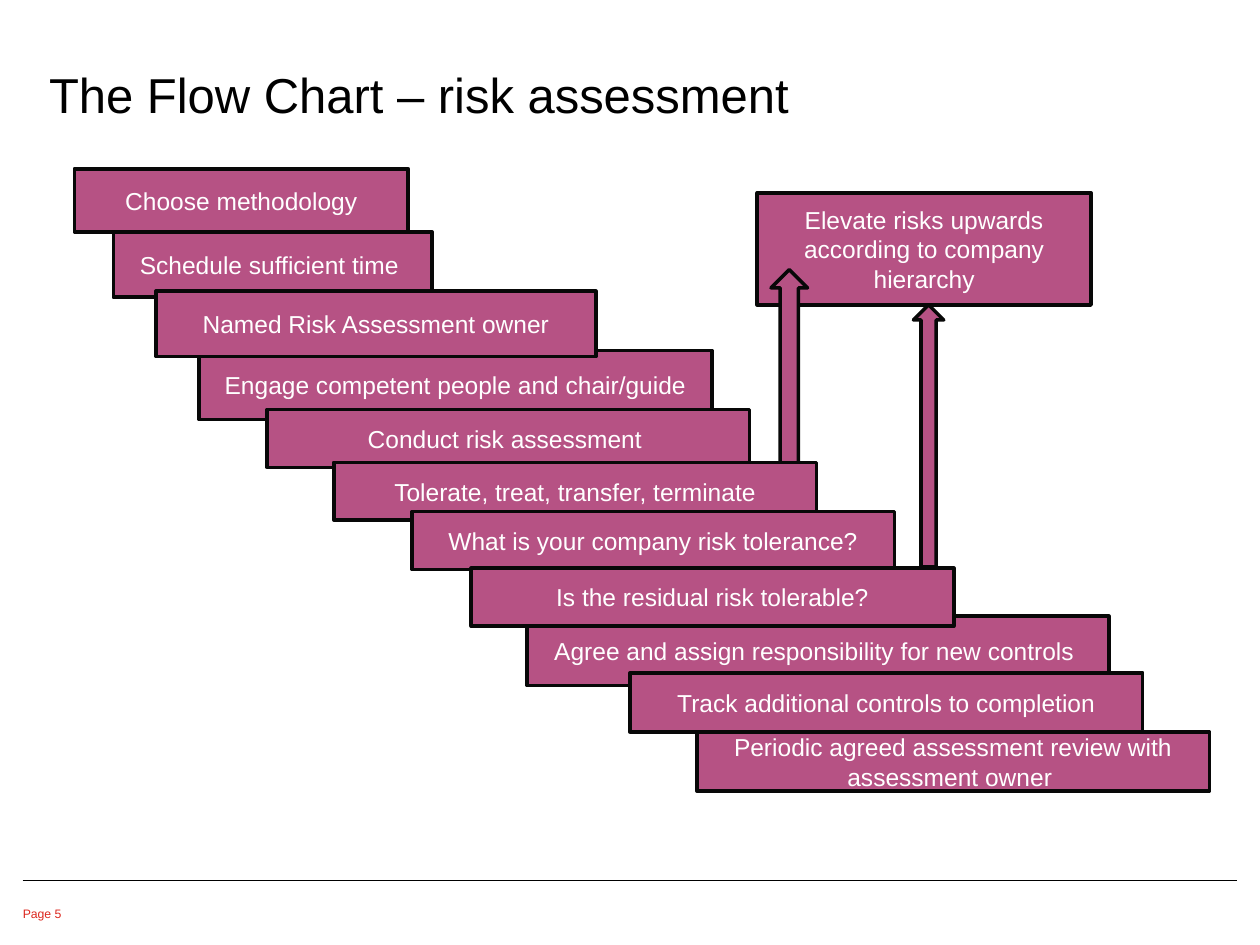
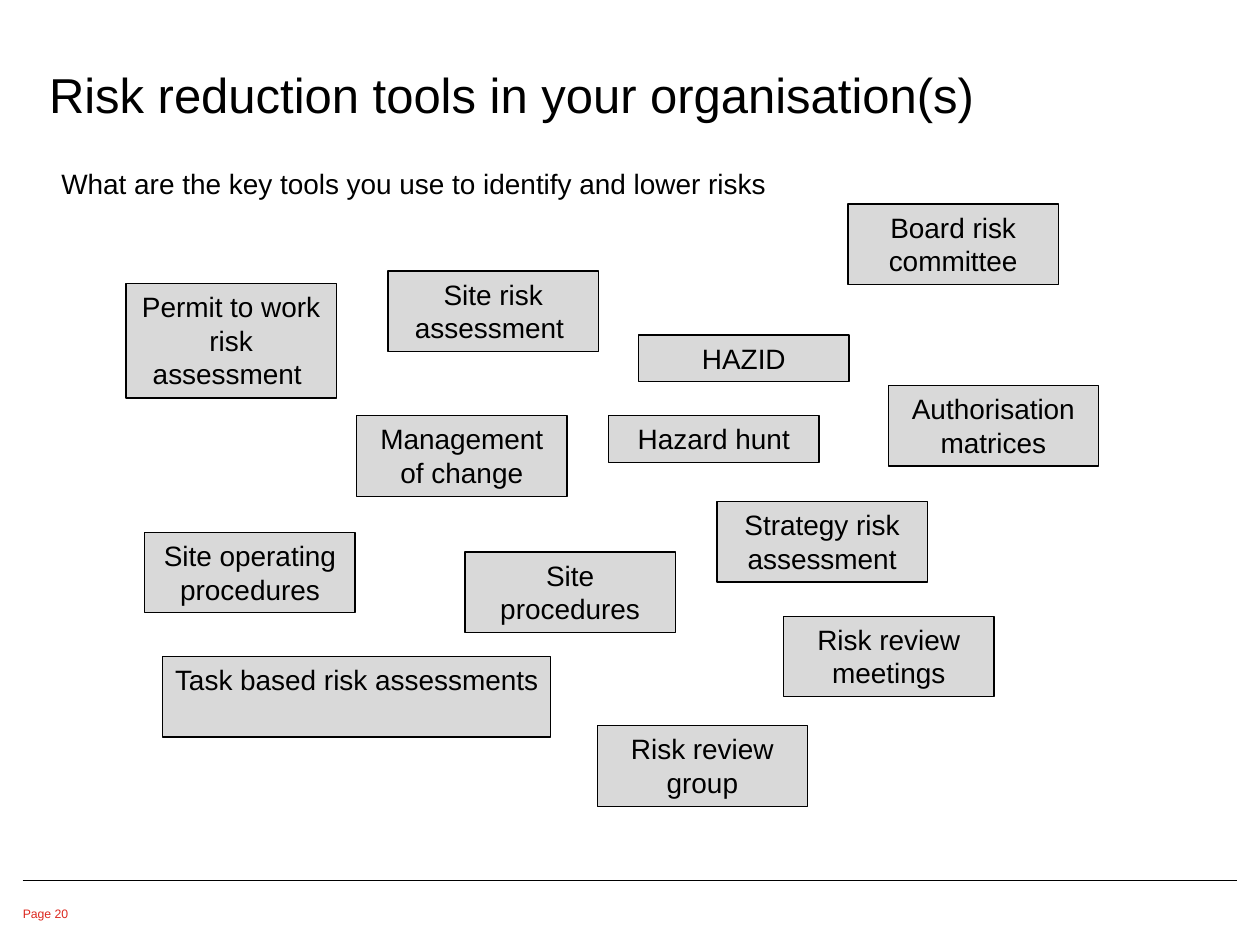
from dataclasses import dataclass
from typing import Any

from lxml import etree
from pptx import Presentation
from pptx import util as u
from pptx.dml.color import RGBColor
from pptx.enum import shapes, text
from pptx.oxml import ns

BLACK = RGBColor(0x00, 0x00, 0x00)
WHITE = RGBColor(0xFF, 0xFF, 0xFF)
OUTLINE = RGBColor(0x08, 0x08, 0x08)
MAGENTA = RGBColor(0xB6, 0x52, 0x84)
GREY = RGBColor(0xD9, 0xD9, 0xD9)
RED = RGBColor(0xDC, 0x27, 0x1E)

FONT = "Arial"
MARGIN = 13
RULE_TOP = 503.3
TOOL_WIDTH = 120.2
TOOL_LINE = 19.4
TOOL_PADDING = 7.2

NO_INSETS = {"margin_left": 0, "margin_top": 0, "margin_right": 0, "margin_bottom": 0}
FRAME = {"word_wrap": True, "auto_size": text.MSO_AUTO_SIZE.NONE}
TITLE_FRAME = {**FRAME, **NO_INSETS, "vertical_anchor": text.MSO_ANCHOR.BOTTOM}
PAGE_FRAME = {**FRAME, **NO_INSETS, "word_wrap": False}
LEFT = {"alignment": text.PP_ALIGN.LEFT}
CENTRE = {"alignment": text.PP_ALIGN.CENTER}


@dataclass(frozen=True)
class Look:
    fill: RGBColor
    line: RGBColor
    line_width: float
    font_colour: RGBColor
    font_size: float
    anchor: text.MSO_ANCHOR


@dataclass(frozen=True)
class Box:
    left: float
    top: float
    width: float
    height: float
    label: str = ""
    preset: shapes.MSO_SHAPE = shapes.MSO_SHAPE.RECTANGLE


@dataclass(frozen=True)
class Tool:
    left: float
    top: float
    label: str
    lines: int = 2
    width: float = TOOL_WIDTH

    def box(self) -> Box:
        height = TOOL_PADDING + TOOL_LINE * self.lines
        return Box(self.left, self.top, self.width, height, self.label)


STEP_LOOK = Look(MAGENTA, OUTLINE, 2, WHITE, 14, text.MSO_ANCHOR.MIDDLE)
TOOL_LOOK = Look(GREY, BLACK, 0.75, BLACK, 16, text.MSO_ANCHOR.TOP)

ARROW = shapes.MSO_SHAPE.UP_ARROW
FLOW = [
    Box(42.5, 96.5, 190.8, 36, "Choose methodology"),
    Box(64.8, 132.5, 182.2, 37.4, "Schedule sufficient time "),
    Box(113.8, 200.2, 293, 39.6, "Engage competent people and chair/guide"),
    Box(89.2, 166.3, 251.3, 37.4, "Named Risk Assessment owner"),
    Box(152.6, 234, 275.8, 33.1, "Conduct risk assessment "),
    Box(301, 352.1, 332.6, 39.6, "Agree and assign responsibility for new controls "),
    Box(360, 384.5, 293, 33.8, "Track additional controls to completion"),
    Box(398.2, 418.3, 293, 33.8, "Periodic agreed assessment review with assessment owner "),
    Box(432.7, 110.2, 190.8, 64.1, "Elevate risks upwards according to company hierarchy"),
    Box(440.6, 154.1, 20.9, 116.6, preset=ARROW),
    Box(190.8, 264.2, 275.8, 33.1, "Tolerate, treat, transfer, terminate"),
    Box(235.4, 292.3, 275.8, 33.1, "What is your company risk tolerance?"),
    Box(269.3, 324.7, 275.8, 33.1, "Is the residual risk tolerable?"),
    Box(522, 174.2, 17.3, 149.8, preset=ARROW),
]
TOOLS = [
    Tool(72, 162, "Permit to work risk assessment ", lines=3),
    Tool(203.8, 237.6, "Management of change"),
    Tool(221.8, 154.8, "Site risk assessment "),
    Tool(365, 191.5, "HAZID", lines=1),
    Tool(347.8, 237.6, "Hazard hunt", lines=1),
    Tool(82.8, 304.2, "Site operating procedures"),
    Tool(265.7, 315.4, "Site procedures"),
    Tool(447.8, 352.1, "Risk review meetings"),
    Tool(92.9, 375.1, "Task based risk assessments", width=221.8),
    Tool(507.6, 220.3, "Authorisation matrices"),
    Tool(341.3, 414.7, "Risk review group"),
    Tool(484.6, 116.6, "Board risk committee"),
    Tool(409.7, 286.6, "Strategy risk assessment"),
]


def apply_format(target: Any, values: dict[str, Any]) -> None:
    for name, value in values.items():
        setattr(target, name, value)


def write(shape: Any, content: str, size: float, colour: RGBColor,
          frame_format: dict[str, Any], paragraph_format: dict[str, Any]) -> None:
    frame = shape.text_frame
    apply_format(frame, frame_format)
    paragraph = frame.paragraphs[0]
    apply_format(paragraph, paragraph_format)
    run = paragraph.add_run()
    run.text = content
    apply_format(run.font, {"name": FONT, "size": u.Pt(size)})
    run.font.color.rgb = colour


def add_box(slide: Any, box: Box, look: Look) -> None:
    bounds = map(u.Pt, (box.left, box.top, box.width, box.height))
    shape = slide.shapes.add_shape(box.preset, *bounds)
    shape.shadow.inherit = False
    shape.fill.solid()
    shape.fill.fore_color.rgb = look.fill
    shape.line.color.rgb = look.line
    shape.line.width = u.Pt(look.line_width)
    if box.label:
        frame_format = {**FRAME, "vertical_anchor": look.anchor}
        write(shape, box.label, look.font_size, look.font_colour, frame_format, CENTRE)


def add_textbox(slide: Any, box: Box, size: float, colour: RGBColor,
                frame_format: dict[str, Any], paragraph_format: dict[str, Any]) -> None:
    bounds = map(u.Pt, (box.left, box.top, box.width, box.height))
    shape = slide.shapes.add_textbox(*bounds)
    write(shape, box.label, size, colour, frame_format, paragraph_format)


def add_footer(slide: Any, slide_width: float, page: int) -> None:
    ends = map(u.Pt, (MARGIN, RULE_TOP, slide_width - MARGIN, RULE_TOP))
    rule = slide.shapes.add_connector(shapes.MSO_CONNECTOR.STRAIGHT, *ends)
    rule.line.color.rgb = BLACK
    rule.line.width = u.Pt(0.75)
    etree.SubElement(rule._element.spPr, ns.qn("a:effectLst"))
    label = Box(MARGIN, 517.7, 29.5, 10.8, f"Page {page}")
    add_textbox(slide, label, 7, RED, PAGE_FRAME, LEFT)


def add_slide(presentation: Any, heading: str, page: int) -> Any:
    slide = presentation.slides.add_slide(presentation.slide_layouts.get_by_name("Title Only"))
    title = slide.shapes.title
    apply_format(title, {"left": u.Pt(28), "top": u.Pt(-5.8),
                         "width": u.Pt(674), "height": u.Pt(76.3)})
    write(title, heading, 28, BLACK, TITLE_FRAME, LEFT)
    add_footer(slide, presentation.slide_width.pt, page)
    return slide


def main() -> None:
    presentation = Presentation()
    apply_format(presentation, {"slide_width": u.Pt(720), "slide_height": u.Pt(540)})

    flow_slide = add_slide(presentation, "The Flow Chart – risk assessment", 5)
    for box in FLOW:
        add_box(flow_slide, box, STEP_LOOK)

    tools_slide = add_slide(presentation, "Risk reduction tools in your organisation(s)", 20)
    question = Box(28, 91.4, 542.2, 26.6,
                   "What are the key tools you use to identify and lower risks")
    add_textbox(tools_slide, question, 16, BLACK, FRAME, {**LEFT, "space_before": u.Pt(6)})
    for tool in TOOLS:
        add_box(tools_slide, tool.box(), TOOL_LOOK)

    presentation.save("out.pptx")


if __name__ == "__main__":
    main()
